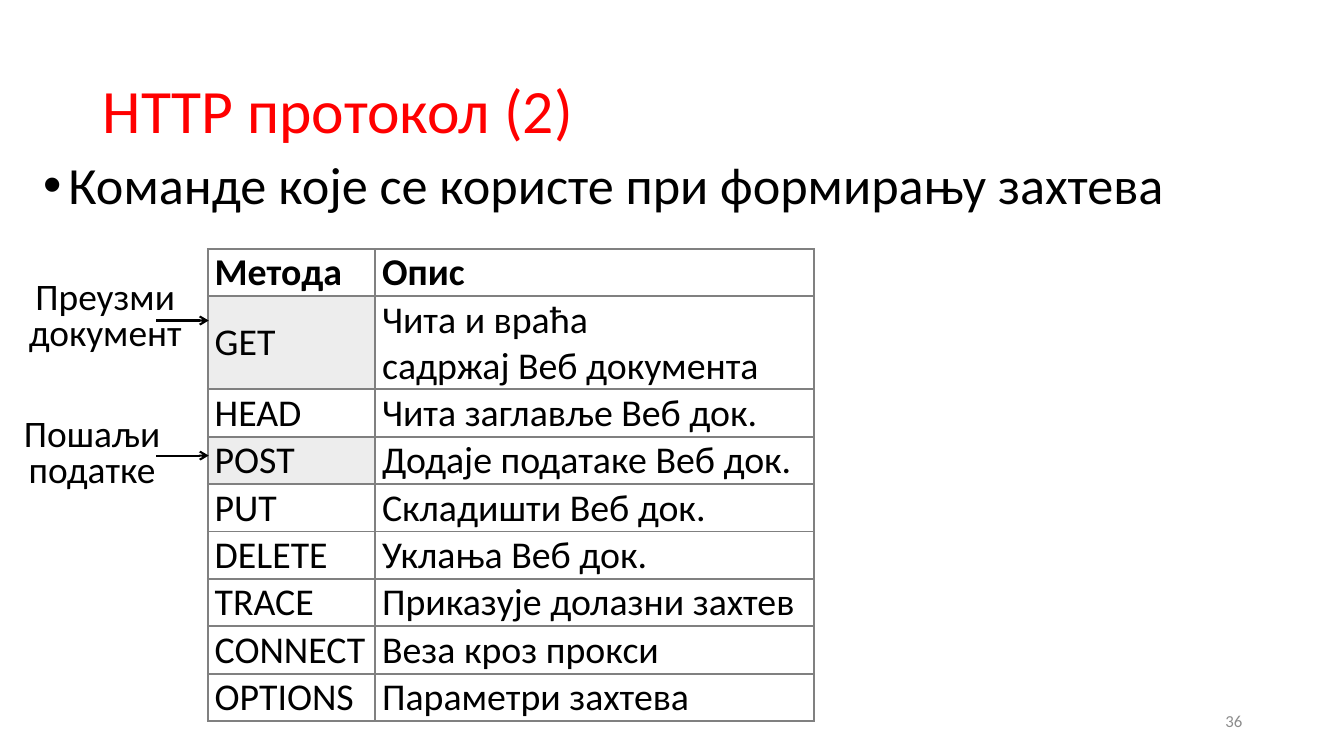
from lxml import etree
from pptx import Presentation
from pptx.dml.color import RGBColor
from pptx.enum.shapes import MSO_CONNECTOR
from pptx.enum.text import MSO_ANCHOR, PP_ALIGN
from pptx.oxml.ns import qn
from pptx.util import Inches, Pt

LEFT, CENTER, RIGHT = PP_ALIGN.LEFT, PP_ALIGN.CENTER, PP_ALIGN.RIGHT
TOP, MIDDLE = MSO_ANCHOR.TOP, MSO_ANCHOR.MIDDLE
STRAIGHT = MSO_CONNECTOR.STRAIGHT
FONT = "Calibri"
BLACK, RED, GREY, PALE, DIM = "000000", "FF0000", "808080", "EDEDED", "8C8C8C"

ROWS = [
    ("Метода", "Опис"),
    ("GET", "Чита и враћа\nсадржај Веб документа"),
    ("HEAD", "Чита заглавље Веб док."),
    ("POST", "Додаје податаке Веб док."),
    ("PUT", "Складишти Веб док."),
    ("DELETE", "Уклања Веб док."),
    ("TRACE", "Приказује долазни захтев"),
    ("CONNECT", "Веза кроз прокси"),
    ("OPTIONS", "Параметри захтева"),
]
MARKED = ("GET", "POST")


def color(code):
    return RGBColor.from_string(code)


def write(para, text, size, code=BLACK, bold=False):
    """Add runs to a paragraph, with a line break between lines."""
    for i, line in enumerate(text.split("\n")):
        if i:
            para.add_line_break()
        run = para.add_run()
        run.text = line
        font = run.font
        font.name, font.size, font.bold = FONT, Pt(size), bold
        font.color.rgb = color(code)


def add_text(slide, box, text, size, code=BLACK, align=LEFT, anchor=TOP,
             space=1.0, wrap=True):
    shape = slide.shapes.add_textbox(*map(Inches, box))
    frame = shape.text_frame
    frame.word_wrap, frame.vertical_anchor = wrap, anchor
    para = frame.paragraphs[0]
    para.alignment, para.line_spacing = align, space
    write(para, text, size, code)
    return para


def add_bullet(para, indent):
    props = para._p.get_or_add_pPr()
    props.set("marL", str(Inches(indent)))
    props.set("indent", str(-Inches(indent)))
    etree.SubElement(props, qn("a:buFont")).set("typeface", "Arial")
    etree.SubElement(props, qn("a:buChar")).set("char", "•")


def add_arrow(slide, x1, x2, y):
    line = slide.shapes.add_connector(
        STRAIGHT, Inches(x1), Inches(y), Inches(x2), Inches(y))
    line.line.color.rgb = color(BLACK)
    line.line.width = Pt(1.5)
    etree.SubElement(line.line._get_or_add_ln(), qn("a:tailEnd")).set("type", "arrow")
    etree.SubElement(line._element.spPr, qn("a:effectLst"))


def add_border(cell):
    props = cell._tc.get_or_add_tcPr()
    for i, side in enumerate(("lnL", "lnR", "lnT", "lnB")):
        edge = etree.Element(qn("a:" + side), w=str(Pt(1.5)))
        fill = etree.SubElement(edge, qn("a:solidFill"))
        etree.SubElement(fill, qn("a:srgbClr")).set("val", GREY)
        props.insert(i, edge)


def fill_cell(cell, text, bold):
    cell.margin_left = cell.margin_right = Inches(0.07)
    cell.margin_top = cell.margin_bottom = Inches(0.01)
    cell.vertical_anchor = MIDDLE
    if text in MARKED:
        cell.fill.solid()
        cell.fill.fore_color.rgb = color(PALE)
    else:
        cell.fill.background()
    add_border(cell)
    write(cell.text_frame.paragraphs[0], text, 27, bold=bold)


def add_grid(slide, left, top, widths, height):
    frame = slide.shapes.add_table(
        len(ROWS), len(widths), Inches(left), Inches(top),
        Inches(sum(widths)), Inches(height * len(ROWS)))
    table = frame.table
    table.first_row = table.horz_banding = False
    for col, width in zip(table.columns, widths):
        col.width = Inches(width)
    for r, row in enumerate(ROWS):
        table.rows[r].height = Inches(height)
        for c, text in enumerate(row):
            fill_cell(table.cell(r, c), text, bold=r == 0)


def main():
    deck = Presentation()
    deck.slide_width, deck.slide_height = Inches(13.33), Inches(7.5)
    slide = deck.slides.add_slide(deck.slide_layouts[6])

    # Title and lead line
    add_text(slide, (0.92, 0.4, 11.5, 1.45), "HTTP протокол (2)", 44, RED,
             anchor=MIDDLE, space=0.9)
    lead = add_text(slide, (0.33, 1.53, 13, 5.22),
                    "Команде које се користе при формирању захтева", 37.3, space=0.9)
    lead.space_before = Pt(10)
    add_bullet(lead, 0.25)

    # Table of methods
    add_grid(slide, 2.06, 2.47, (1.66, 4.35), 0.47)

    # Side labels with arrows
    labels = [
        ((0.18, 2.75, 1.73, 0.82), "Преузми\nдокумент", False, 3.18),
        ((0.13, 4.11, 1.57, 0.83), "Пошаљи\nподатке", True, 4.52),
    ]
    for box, text, wrap, y in labels:
        add_text(slide, box, text, 26.7, align=CENTER, space=0.8, wrap=wrap)
        add_arrow(slide, 1.55, 2.07, y)

    # Page number
    add_text(slide, (9.42, 6.95, 3, 0.4), "36", 12, DIM, RIGHT, MIDDLE)

    deck.save("out.pptx")


if __name__ == "__main__":
    main()
